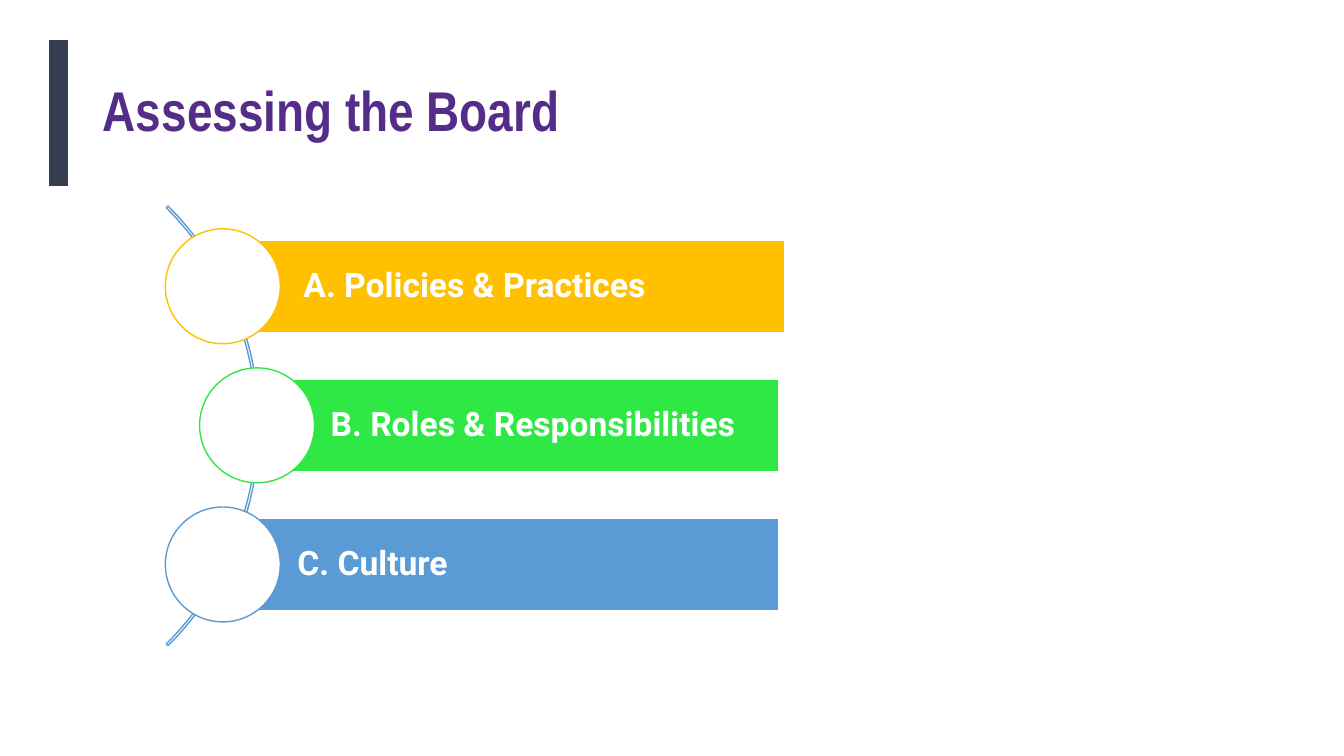
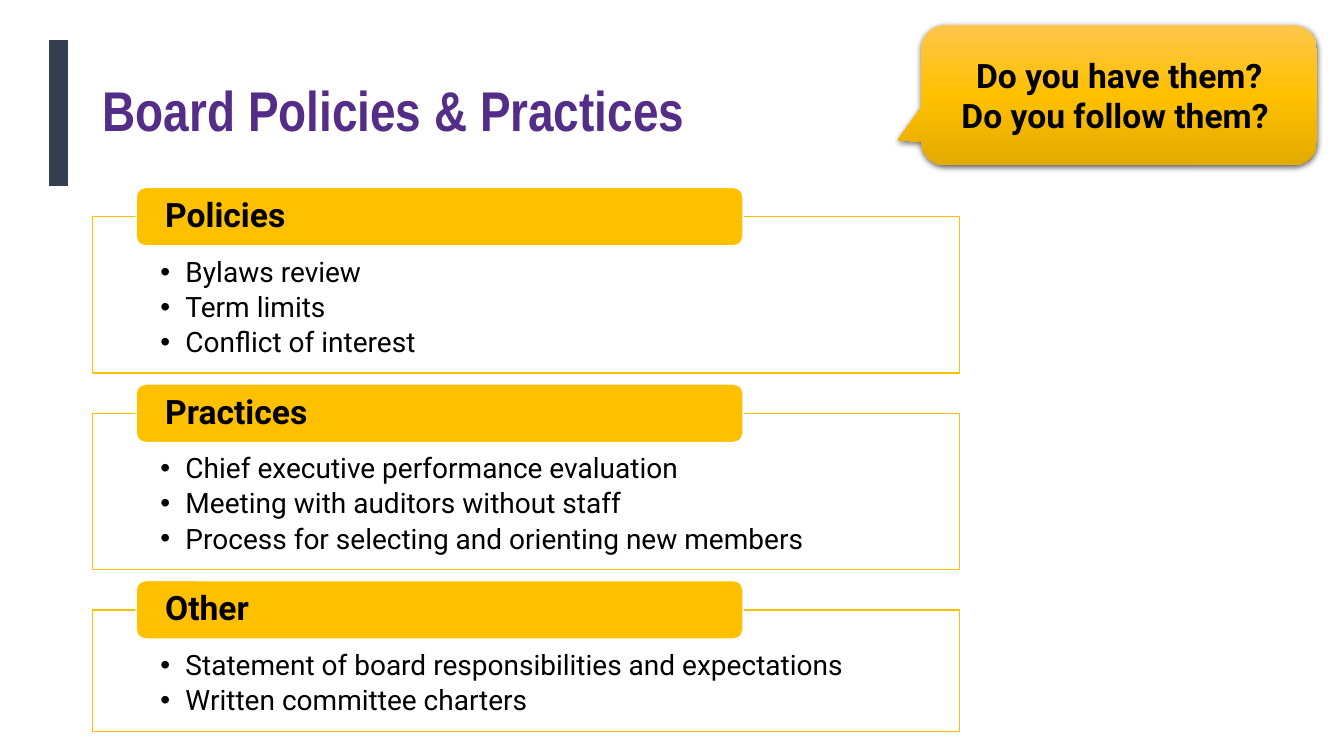
"""Build two slides on assessing a board: an overview and its policies and practices."""
import copy

from lxml import etree
from pptx import Presentation
from pptx import util as u
from pptx.dml.color import RGBColor
from pptx.enum import shapes, text
from pptx.oxml.ns import qn

COLORS = {
    "bar": "333F50",
    "title": "542D89",
    "gold": "FFC000",
    "gold_light": "FFC64B",
    "gold_dark": "E3AB00",
    "green": "30E845",
    "blue": "5B9BD5",
    "white": "FFFFFF",
    "black": "000000",
}
KIND = shapes.MSO_SHAPE


def rgb(name):
    """Return the named colour."""
    return RGBColor.from_string(COLORS[name])


def write(frame, lines, size=24, color="black", font="Roboto", bold=False,
          align=text.PP_ALIGN.LEFT, anchor=text.MSO_ANCHOR.MIDDLE,
          insets=(0.1, 0.05, 0.1, 0.05), spacing=0.9, after=0, bullet=None):
    """Fill a text frame with one paragraph per line."""
    frame.word_wrap = True
    frame.auto_size = text.MSO_AUTO_SIZE.NONE
    frame.vertical_anchor = anchor
    (frame.margin_left, frame.margin_top,
     frame.margin_right, frame.margin_bottom) = map(u.Inches, insets)
    for index, line in enumerate(lines):
        paragraph = frame.add_paragraph() if index else frame.paragraphs[0]
        paragraph.alignment = align
        paragraph.line_spacing = spacing
        paragraph.space_after = u.Pt(after)
        if bullet:
            props = paragraph._p.get_or_add_pPr()
            props.set("marL", str(u.Inches(0.25)))
            props.set("indent", str(-u.Inches(0.25)))
            etree.SubElement(props, qn("a:buFont"), typeface="Arial")
            etree.SubElement(props, qn("a:buChar"), char=bullet)
        run = paragraph.add_run()
        run.text = line
        run.font.size = u.Pt(size)
        run.font.name = font
        run.font.bold = bold
        run.font.color.rgb = rgb(color)


class Deck:
    """Hold the presentation, its style and the current slide."""

    def __init__(self):
        """Start an empty wide presentation."""
        self.show = Presentation()
        self.show.slide_width = u.Inches(13.33)
        self.show.slide_height = u.Inches(7.5)
        self.slide = None

    def new_slide(self, heading):
        """Add a slide with the side bar and a title."""
        self.slide = self.show.slides.add_slide(self.show.slide_layouts[5])
        bar = self.slide.shapes.add_connector(
            shapes.MSO_CONNECTOR.STRAIGHT,
            u.Inches(0.58), u.Inches(1.85), u.Inches(0.58), u.Inches(0.4))
        bar.line.color.rgb = rgb("bar")
        bar.line.width = u.Pt(13)
        etree.SubElement(bar._element.spPr, qn("a:effectLst"))
        title = self.slide.shapes.title
        title.left, title.top = u.Inches(0.92), u.Inches(0.4)
        title.width, title.height = u.Inches(11.75), u.Inches(1.45)
        write(title.text_frame, [heading], size=40, color="title",
              font="Arial Narrow", bold=True)

    def shape(self, kind, left, top, width, height, fill=None, line=None, adjust=()):
        """Add a preset shape without shadow."""
        item = self.slide.shapes.add_shape(
            kind, *map(u.Inches, (left, top, width, height)))
        item.shadow.inherit = False
        if fill:
            item.fill.solid()
            item.fill.fore_color.rgb = rgb(fill)
        else:
            item.fill.background()
        if line:
            item.line.color.rgb = rgb(line)
            item.line.width = u.Pt(1)
        else:
            item.line.fill.background()
        for index, value in enumerate(adjust):
            item.adjustments[index] = value
        return item

    def topic(self, label, color, top, left, width, circle_left):
        """Add a coloured band with a circle over its left end."""
        band = self.shape(KIND.RECTANGLE, left, top, width, 0.92, color, "white")
        write(band.text_frame, [label], color="white", bold=True,
              insets=(0.73, 0.07, 0.07, 0.07))
        self.shape(KIND.OVAL, circle_left, top - 0.11, 1.14, 1.14, "white", color)

    def panel(self, heading, points, top, height):
        """Add an outlined bullet list with a heading tab on its top edge."""
        box = self.shape(KIND.RECTANGLE, 0.92, top, 8.6, height, "white", "gold")
        write(box.text_frame, points, size=20, anchor=text.MSO_ANCHOR.TOP,
              insets=(0.67, 0.41, 0.67, 0.16), after=3.5, bullet="•")
        tab = self.shape(KIND.ROUNDED_RECTANGLE, 1.35, top - 0.29, 6.02, 0.58,
                         "gold", "white")
        write(tab.text_frame, [heading], bold=True, insets=(0.26, 0, 0.26, 0))

    def callout(self, lines):
        """Add a shaded speech bubble with a soft shadow."""
        bubble = self.shape(KIND.ROUNDED_RECTANGULAR_CALLOUT, 9.14, 0.25, 3.92, 1.39,
                            adjust=(-0.56, 0.32, 0.17))
        bubble.fill.gradient()
        bubble.fill.gradient_angle = 270
        props = bubble._element.spPr
        stops = next(props.iter(qn("a:gsLst")))
        stops.append(copy.deepcopy(stops[0]))
        shades = (("gold_light", 0), ("gold", 0.5), ("gold_dark", 1))
        for stop, (color, position) in zip(bubble.fill.gradient_stops, shades):
            stop.color.rgb = rgb(color)
            stop.position = position
        shadow = etree.SubElement(
            props.find(qn("a:effectLst")), qn("a:outerShdw"),
            blurRad=str(u.Pt(4.5)), dist=str(u.Pt(1.5)), dir="5400000",
            algn="ctr", rotWithShape="0")
        tint = etree.SubElement(shadow, qn("a:srgbClr"), val=COLORS["black"])
        etree.SubElement(tint, qn("a:alpha"), val="63000")
        write(bubble.text_frame, lines, bold=True, spacing=1,
              align=text.PP_ALIGN.CENTER)


def main():
    """Build and save both slides."""
    deck = Deck()

    deck.new_slide("Assessing the Board")
    deck.shape(KIND.BLOCK_ARC, -3.6, 1.14, 6.17, 6.17, line="blue",
               adjust=(189, 27, 0.004))
    topics = (
        ("A. Policies & Practices", "gold", 2.28, 5.5, 1.64),
        ("B. Roles & Responsibilities", "green", 2.55, 5.17, 1.98),
        ("C. Culture", "blue", 2.22, 5.5, 1.64),
    )
    for row, (label, color, left, width, circle_left) in enumerate(topics):
        deck.topic(label, color, 2.38 + 1.38 * row, left, width, circle_left)

    deck.new_slide("Board Policies & Practices")
    panels = (
        ("Policies", ("Bylaws review", "Term limits", "Conflict of interest")),
        ("Practices", ("Chief executive performance evaluation",
                       "Meeting with auditors without staff",
                       "Process for selecting and orienting new members")),
        ("Other", ("Statement of board responsibilities and expectations",
                   "Written committee charters")),
    )
    for row, (heading, points) in enumerate(panels):
        deck.panel(heading, points, 2.15 + 1.95 * row, 0.53 + 0.34 * len(points))
    deck.callout(("Do you have them?", "Do you follow them? "))

    deck.show.save("out.pptx")


if __name__ == "__main__":
    main()
